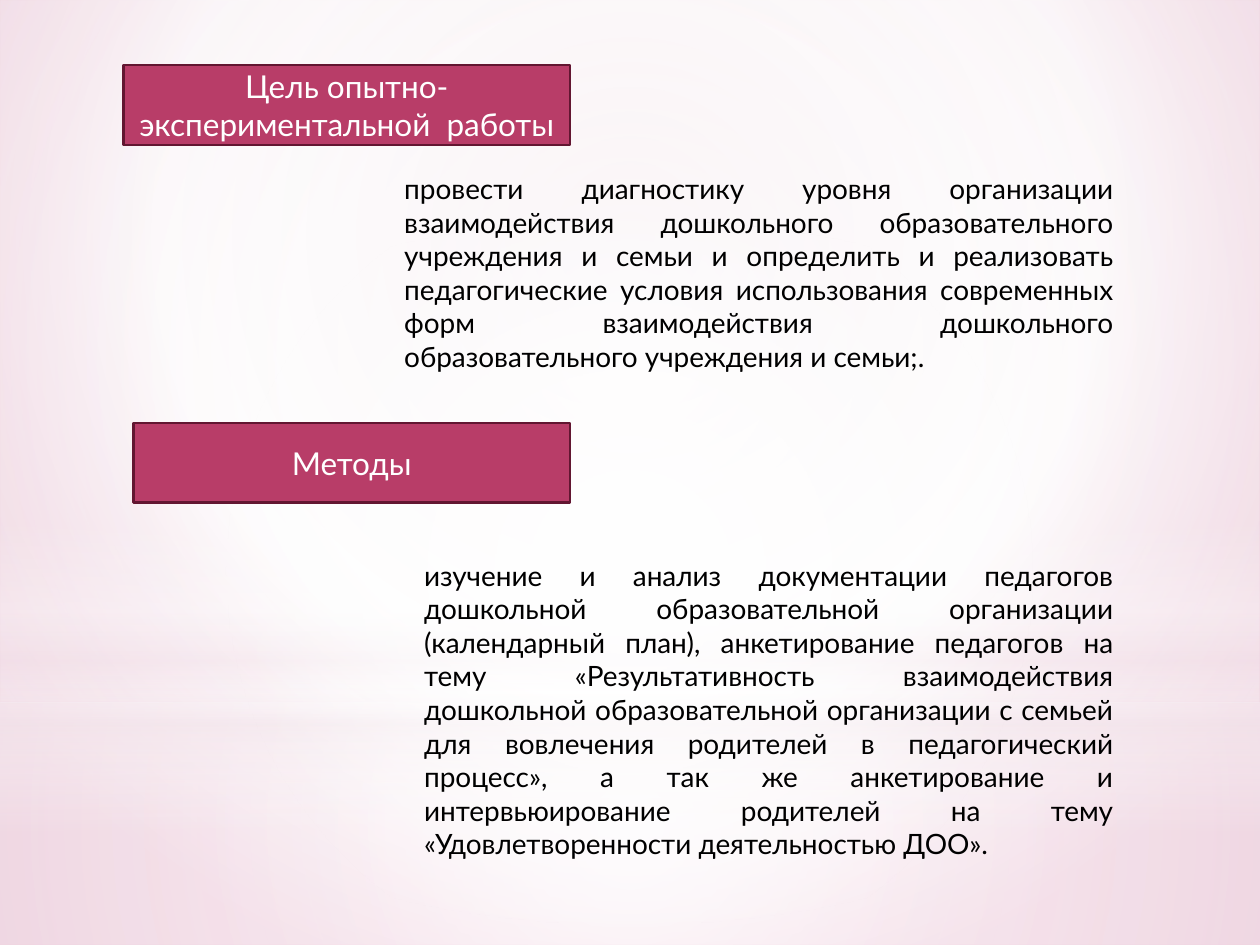
"""Build a slide on the aim and methods of an experimental study."""
from lxml import etree
from pptx import Presentation
from pptx.dml.color import RGBColor
from pptx.enum.shapes import MSO_SHAPE
from pptx.enum.text import MSO_ANCHOR, PP_ALIGN
from pptx.oxml.ns import qn
from pptx.util import Pt

RECTANGLE, ELLIPSE = MSO_SHAPE.RECTANGLE, MSO_SHAPE.OVAL
TOP, MIDDLE = MSO_ANCHOR.TOP, MSO_ANCHOR.MIDDLE
CENTER, JUSTIFY = PP_ALIGN.CENTER, PP_ALIGN.JUSTIFY

WIDTH, HEIGHT = 720, 540
FONT = "Lato"
WHITE, BLACK, PINK, WINE, BLUSH = "FFFFFF", "000000", "B83D68", "621631", "F4E7ED"

CENTERED = (50, 50, 50, 50)
BACKGROUND = [(0, "EDDAE2", 100), (60, WHITE, 100), (100, "E09DBC", 100)]
BACKGROUND_FOCUS = (20, 10, 20, 60)
GLOWS = [
    (RECTANGLE, 401.5, 138.5, CENTERED,
     [(0, WHITE, 91), (37, WHITE, 76), (100, BLUSH, 79)]),
    (RECTANGLE, 0, 401.5, CENTERED,
     [(0, WHITE, 89), (48, WHITE, 62), (100, BLUSH, 79)]),
    (RECTANGLE, 296.5, 180, None,
     [(0, WHITE, 0), (29, WHITE, 30), (45, BLUSH, 40),
      (55, WHITE, 26), (65, BLUSH, 60), (100, WHITE, 0)]),
    (ELLIPSE, 126, 401.5, CENTERED, [(0, WHITE, 100), (56, WHITE, 0)]),
]

HEADING_RIGHT, HEADING_HEIGHT, BODY_RIGHT = 325.7, 45.4, 643.5
SECTIONS = [
    {"heading": "Цель опытно-экспериментальной  работы",
     "heading_at": (70.6, 37.4),
     "body": "провести диагностику уровня организации взаимодействия дошкольного "
             "образовательного учреждения и семьи и определить и реализовать "
             "педагогические условия использования современных форм взаимодействия "
             "дошкольного образовательного учреждения и семьи;.",
     "body_at": (223.9, 94.5), "body_height": 124},
    {"heading": "Методы",
     "heading_at": (76.3, 241.8),
     "body": "изучение и анализ документации педагогов дошкольной образовательной "
             "организации (календарный план), анкетирование педагогов на тему "
             "«Результативность взаимодействия дошкольной образовательной организации "
             "с семьей для вовлечения родителей в педагогический процесс», а так же "
             "анкетирование и интервьюирование родителей на тему "
             "«Удовлетворенности деятельностью ДОО».",
     "body_at": (235.3, 315.4), "body_height": 181.5},
]


def color(value):
    return RGBColor.from_string(value)


def fill_gradient(fill, owner, stops, focus):
    fill.solid()
    fill.fore_color.rgb = color(WHITE)
    solid = next(owner.element.iter(qn("a:solidFill")))
    gradient = etree.Element(qn("a:gradFill"), rotWithShape="1")
    stop_list = etree.SubElement(gradient, qn("a:gsLst"))
    for position, value, opacity in stops:
        stop = etree.SubElement(stop_list, qn("a:gs"), pos=str(position * 1000))
        tint = etree.SubElement(stop, qn("a:srgbClr"), val=value)
        if opacity < 100:
            etree.SubElement(tint, qn("a:alpha"), val=str(opacity * 1000))
    if focus:
        route = etree.SubElement(gradient, qn("a:path"))
        route.set("path", "circle")
        edges = {side: str(part * 1000) for side, part in zip("ltrb", focus)}
        etree.SubElement(route, qn("a:fillToRect"), edges)
    else:
        etree.SubElement(gradient, qn("a:lin"), ang=str(90 * 60000), scaled="0")
    solid.getparent().replace(solid, gradient)


def add_shape(page, kind, left, top, width, height):
    shape = page.shapes.add_shape(kind, Pt(left), Pt(top), Pt(width), Pt(height))
    shape.shadow.inherit = False
    return shape


def write(box, text, size, ink, align, anchor):
    frame = box.text_frame
    frame.word_wrap = True
    frame.vertical_anchor = anchor
    para = frame.paragraphs[0]
    para.alignment = align
    span = para.add_run()
    span.text = text
    span.font.name, span.font.size = FONT, Pt(size)
    span.font.color.rgb = color(ink)


def add_glow(page, kind, top, height, focus, stops):
    glow = add_shape(page, kind, 0, top, WIDTH, height)
    glow.line.fill.background()
    fill_gradient(glow.fill, glow, stops, focus)


def add_section(page, section):
    left, top = section["heading_at"]
    heading = add_shape(page, RECTANGLE, left, top, HEADING_RIGHT - left, HEADING_HEIGHT)
    heading.fill.solid()
    heading.fill.fore_color.rgb = color(PINK)
    heading.line.color.rgb = color(WINE)
    heading.line.width = Pt(1.25)
    write(heading, section["heading"], size=18, ink=WHITE, align=CENTER, anchor=MIDDLE)
    left, top = section["body_at"]
    body = page.shapes.add_textbox(
        Pt(left), Pt(top), Pt(BODY_RIGHT - left), Pt(section["body_height"]))
    write(body, section["body"], size=16, ink=BLACK, align=JUSTIFY, anchor=TOP)


def main():
    deck = Presentation()
    deck.slide_width, deck.slide_height = Pt(WIDTH), Pt(HEIGHT)
    page = deck.slides.add_slide(deck.slide_layouts[6])
    fill_gradient(page.background.fill, page, BACKGROUND, BACKGROUND_FOCUS)
    for glow in GLOWS:
        add_glow(page, *glow)
    for section in SECTIONS:
        add_section(page, section)
    deck.save("out.pptx")


if __name__ == "__main__":
    main()
